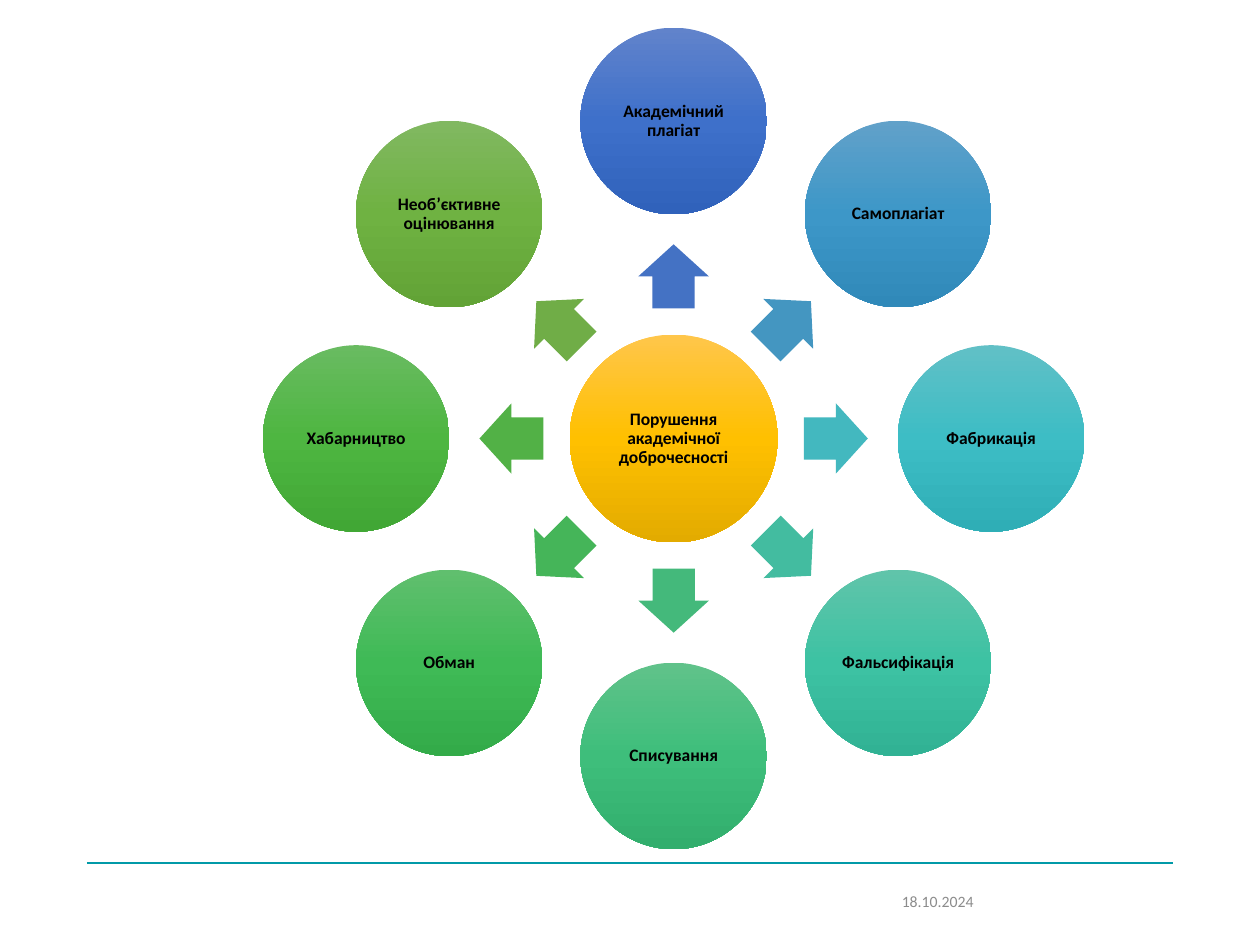
import copy
import math

from lxml import etree
from pptx import Presentation
from pptx import util as u
from pptx.dml.color import RGBColor
from pptx.enum import shapes, text
from pptx.oxml.ns import qn

FONT = "Calibri"
COLORS = {"rule": "019AA8", "date": "8C8C8C", "text": "000000"}
HUB = ("Порушення академічної доброчесності", ("FFC64B", "FFC000", "E3AB00"))
VIOLATIONS = [
    ("Академічний плагіат", "4472C4", ("6183CB", "3E70CA", "3062BB")),
    ("Самоплагіат", "4496C1", ("61A1C9", "3D97C8", "3089B9")),
    ("Фабрикація", "43B8BF", ("61C0C6", "3DBDC5", "2FAEB6")),
    ("Фальсифікація", "43BCA0", ("60C4AA", "3DC2A3", "31B294")),
    ("Списування", "44B97B", ("60C28A", "3EBE7B", "32AE6D")),
    ("Обман", "45B559", ("60BF6E", "3FBA56", "33AB49")),
    ("Хабарництво", "52B146", ("69BB61", "4EB641", "41A735")),
    ("Необ’єктивне оцінювання", "70AD47", ("81B861", "6FB242", "62A336")),
]


def rgb(value):
    """Return the colour for a hex string."""
    return RGBColor.from_string(value)


def add_centered(s, kind, cx, cy, width, height):
    """Add a plain shape centred on a point, in centimetres."""
    sp = s.shapes.add_shape(kind, u.Cm(cx - width / 2), u.Cm(cy - height / 2),
                            u.Cm(width), u.Cm(height))
    sp.shadow.inherit = False
    sp.line.fill.background()
    return sp


def fill_gradient(sp, stops):
    """Fill a shape with three evenly spaced colours from top to bottom."""
    sp.fill.gradient()
    sp.fill.gradient_angle = 270
    gs_list = sp._element.spPr.find(".//" + qn("a:gsLst"))
    gs_list.append(copy.deepcopy(gs_list[-1]))
    for i, (stop, color) in enumerate(zip(sp.fill.gradient_stops, stops)):
        stop.position = i / 2
        stop.color.rgb = rgb(color)


def add_circle(s, cx, cy, size, label, stops):
    """Add a labelled gradient circle."""
    sp = add_centered(s, shapes.MSO_SHAPE.OVAL, cx, cy, size, size)
    fill_gradient(sp, stops)
    tf = sp.text_frame
    tf.word_wrap = True
    tf.vertical_anchor = text.MSO_ANCHOR.MIDDLE
    tf.margin_left = tf.margin_right = tf.margin_top = tf.margin_bottom = u.Cm(0.03)
    p = tf.paragraphs[0]
    p.text = label
    p.alignment = text.PP_ALIGN.CENTER
    p.line_spacing = 0.9
    p.font.name, p.font.size, p.font.bold = FONT, u.Pt(10), True
    p.font.color.rgb = rgb(COLORS["text"])


def add_radial(s, left, top, size):
    """Place the hub, its arrows and the ring of circles in a square box."""
    cx, cy = left + size / 2, top + size / 2
    circle = 3.76
    ring, arrow_ring = (size - circle) / 2, 3.27
    add_circle(s, cx, cy, 4.19, *HUB)
    step = 360 / len(VIOLATIONS)
    for i, (label, color, stops) in enumerate(VIOLATIONS):
        angle = i * step - 90
        dx, dy = math.cos(math.radians(angle)), math.sin(math.radians(angle))
        arrow = add_centered(s, shapes.MSO_SHAPE.RIGHT_ARROW, cx + arrow_ring * dx,
                             cy + arrow_ring * dy, 1.29, 1.42)
        arrow.rotation = angle % 360
        arrow.adjustments[0], arrow.adjustments[1] = 0.6, 0.5
        arrow.fill.solid()
        arrow.fill.fore_color.rgb = rgb(color)
        add_circle(s, cx + ring * dx, cy + ring * dy, circle, label, stops)


def add_footer(s, left, top, width):
    """Place the rule and the date below it."""
    rule = s.shapes.add_connector(shapes.MSO_CONNECTOR.STRAIGHT, u.Cm(left), u.Cm(top),
                                  u.Cm(left + width), u.Cm(top))
    rule.line.color.rgb = rgb(COLORS["rule"])
    rule.line.width = u.Pt(1.5)
    etree.SubElement(rule._element.spPr, qn("a:effectLst"))
    box_width = 5.72
    date = s.shapes.add_textbox(u.Cm(left + width - box_width), u.Cm(top + 0.25),
                                u.Cm(box_width), u.Cm(1.02))
    tf = date.text_frame
    tf.word_wrap = True
    tf.vertical_anchor = text.MSO_ANCHOR.MIDDLE
    p = tf.paragraphs[0]
    p.text = "18.10.2024"
    p.font.name, p.font.size = FONT, u.Pt(9)
    p.font.color.rgb = rgb(COLORS["date"])


def main():
    """Build and save the slide."""
    prs = Presentation()
    prs.slide_width, prs.slide_height = u.Cm(25.4), u.Cm(19.05)
    s = prs.slides.add_slide(prs.slide_layouts[6])
    add_footer(s, 1.75, 17.4, 21.9)
    add_radial(s, 5.3, 0.56, 16.56)
    prs.save("out.pptx")


if __name__ == "__main__":
    main()
